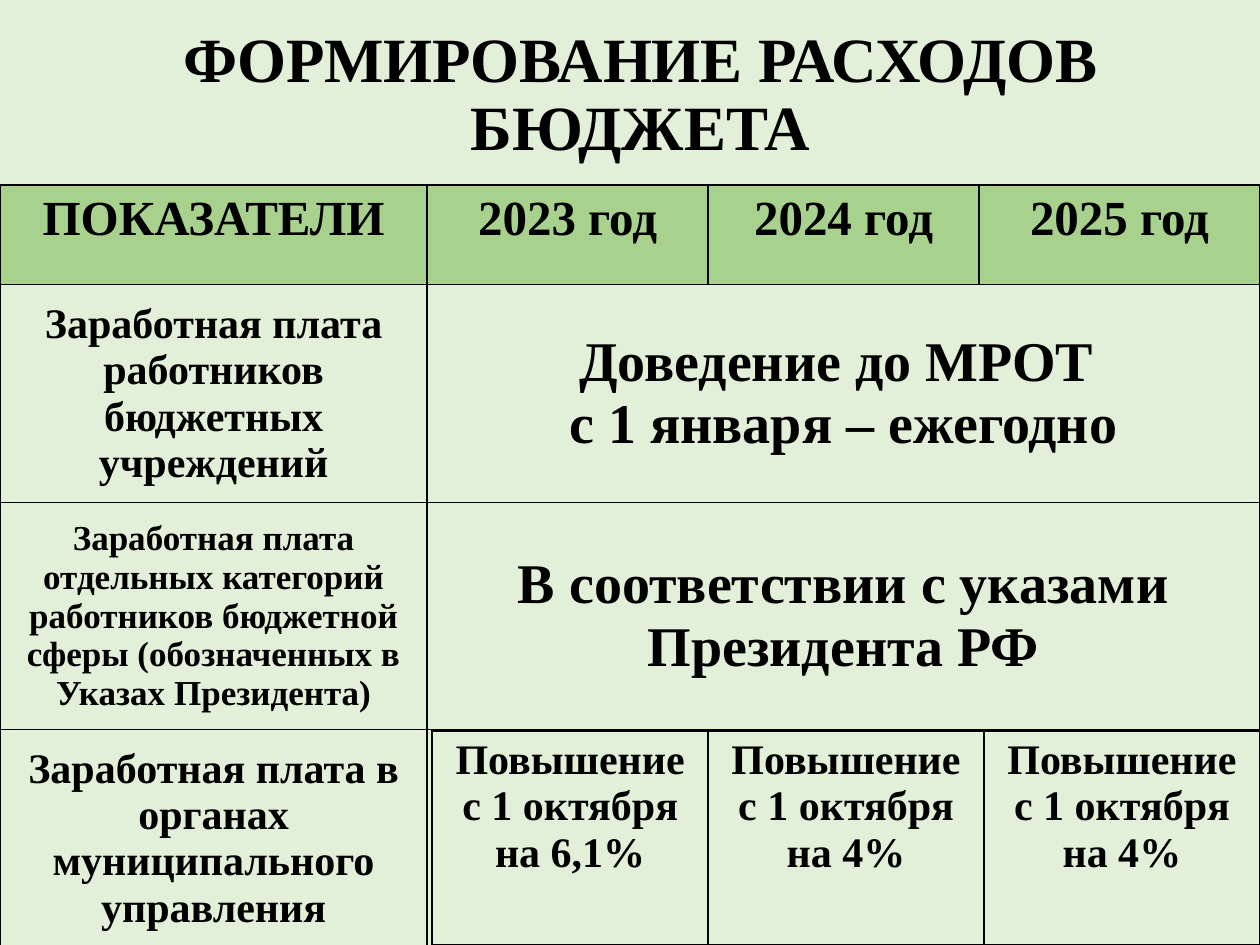
from lxml.etree import SubElement
from pptx import Presentation
from pptx.dml.color import RGBColor
from pptx.enum.text import MSO_ANCHOR, PP_ALIGN
from pptx.oxml.ns import qn
from pptx.util import Inches, Pt

# Content: each cell is (text, size, anchor)
TOP, MID = MSO_ANCHOR.TOP, MSO_ANCHOR.MIDDLE
PALE, GREEN, BLACK = "E2F0D9", "A9D18E", "000000"
TITLE = "ФОРМИРОВАНИЕ РАСХОДОВ БЮДЖЕТА"
HEADS = ["ПОКАЗАТЕЛИ", "2023 год", "2024 год", "2025 год"]
ROWS = [
    [(head, 28, TOP) for head in HEADS],
    [("Заработная плата работников бюджетных учреждений", 24, MID),
     ("Доведение до МРОТ \nс 1 января – ежегодно", 32, MID)],
    [("Заработная плата отдельных категорий работников бюджетной сферы "
      "(обозначенных в Указах Президента)", 20, MID),
     ("В соответствии с указами Президента РФ", 32, MID)],
    [("Заработная плата в органах муниципального управления", 24, MID)],
]
RATES = ["6,1%", "4%", "4%"]
RAISES = [[(f"Повышение с 1 октября на {rate}", 24, TOP) for rate in RATES]]


def color(code):
    return RGBColor.from_string(code)


def write(frame, text, size=24, anchor=TOP, space=None):
    frame.word_wrap = True
    frame.vertical_anchor = anchor
    for i, line in enumerate(text.split("\n")):
        para = frame.paragraphs[0] if i == 0 else frame.add_paragraph()
        para.alignment = PP_ALIGN.CENTER
        if space:
            para.line_spacing = space
        run = para.add_run()
        run.text = line
        font = run.font
        font.name, font.size, font.bold = "Times New Roman", Pt(size), True
        font.color.rgb = color(BLACK)


def border(cell):
    props = cell._tc.get_or_add_tcPr()
    for side in ("lnL", "lnR", "lnT", "lnB"):
        line = SubElement(props, qn(f"a:{side}"), w=str(Pt(1)))
        fill = SubElement(line, qn("a:solidFill"))
        SubElement(fill, qn("a:srgbClr"), val=BLACK)


def grid(slide, left, top, widths, heights, rows, head=PALE):
    frame = slide.shapes.add_table(
        len(heights), len(widths), Inches(left), Inches(top),
        Inches(sum(widths)), Inches(sum(heights)))
    table = frame.table
    for col, width in zip(table.columns, widths):
        col.width = Inches(width)
    for r, (height, row) in enumerate(zip(heights, rows)):
        table.rows[r].height = Inches(height)
        for c in range(len(widths)):
            cell = table.cell(r, c)
            border(cell)
            cell.fill.solid()
            cell.fill.fore_color.rgb = color(PALE if r else head)
        # A short row has one wide cell after its label
        if len(row) < len(widths):
            table.cell(r, 1).merge(table.cell(r, len(widths) - 1))
        for c, (text, size, anchor) in enumerate(row):
            cell = table.cell(r, c)
            write(cell.text_frame, text, size=size)
            cell.vertical_anchor = anchor


def main():
    deck = Presentation()
    deck.slide_width, deck.slide_height = Inches(10), Inches(7.5)
    slide = deck.slides.add_slide(deck.slide_layouts[6])
    slide.background.fill.solid()
    slide.background.fill.fore_color.rgb = color(PALE)

    # Title
    box = slide.shapes.add_textbox(
        Inches(0.35), Inches(0.13), Inches(9.47), Inches(1.26))
    box.fill.solid()
    box.fill.fore_color.rgb = color(PALE)
    write(box.text_frame, TITLE, size=36, anchor=MID, space=0.9)

    # Main table, then the yearly raises over its last row
    grid(slide, 0, 1.47, [3.39, 2.23, 2.15, 2.23],
         [0.79, 1.73, 1.8, 1.73], ROWS, head=GREEN)
    grid(slide, 3.43, 5.8, [2.19] * 3, [1.7], RAISES)
    deck.save("out.pptx")


if __name__ == "__main__":
    main()
